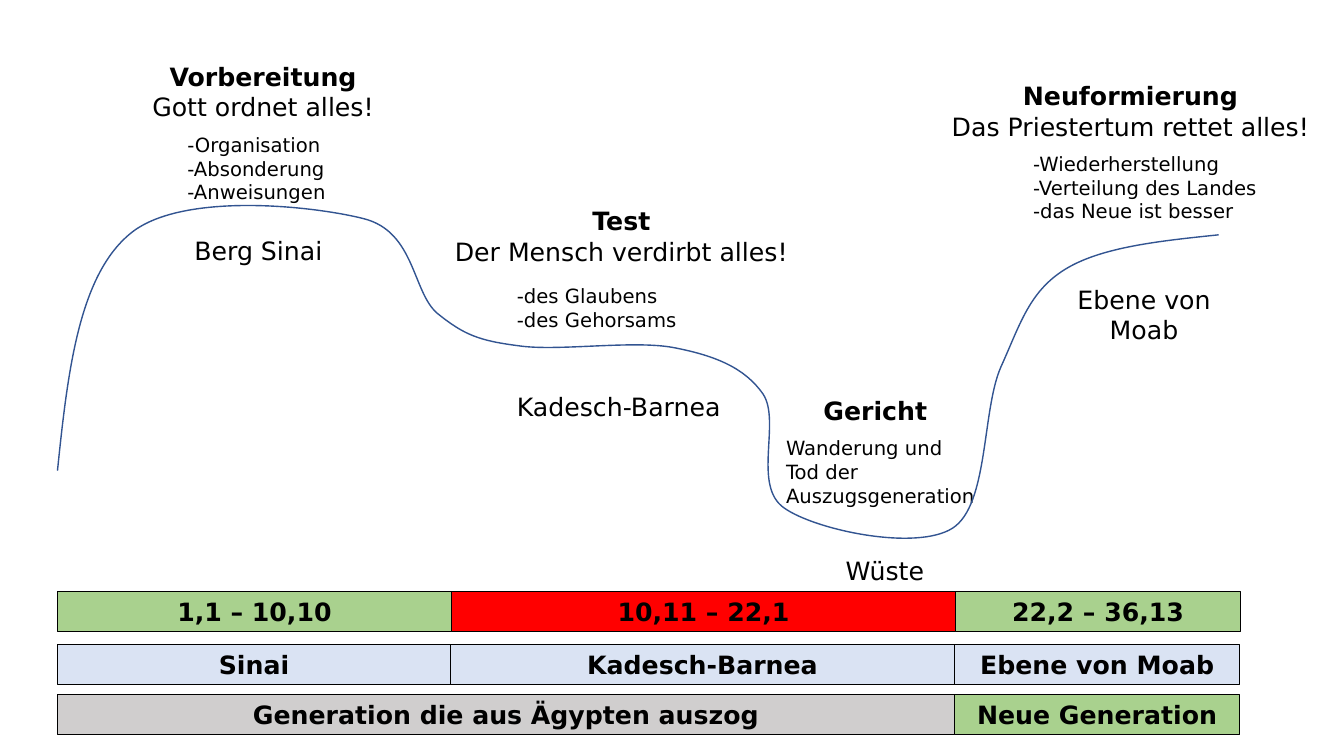
from lxml.etree import SubElement
from pptx import Presentation
from pptx.dml.color import RGBColor
from pptx.enum.shapes import MSO_SHAPE
from pptx.enum.text import MSO_ANCHOR, MSO_AUTO_SIZE, PP_ALIGN
from pptx.oxml.ns import qn
from pptx.util import Inches, Pt

COLORS = {
    "black": "000000",
    "curve": "325491",
    "blue": "DAE3F3",
    "gray": "D0CECE",
    "green": "A9D18E",
    "red": "FF0000",
}
FRAME = {
    "word_wrap": True,
    "auto_size": MSO_AUTO_SIZE.SHAPE_TO_FIT_TEXT,
    "vertical_anchor": MSO_ANCHOR.TOP,
}
HEAD = {"name": "DejaVu Sans", "size": Pt(18), "bold": True}
LABEL = {**HEAD, "bold": False}
NOTE = {**LABEL, "size": Pt(14)}
LEFT, CENTER = PP_ALIGN.LEFT, PP_ALIGN.CENTER


def color(name):
    return RGBColor.from_string(COLORS[name])


def write(shape, lines, align):
    frame = shape.text_frame
    for key, value in FRAME.items():
        setattr(frame, key, value)
    for i, (text, style) in enumerate(lines):
        para = frame.add_paragraph() if i else frame.paragraphs[0]
        para.alignment = align
        run = para.add_run()
        run.text = text
        for key, value in style.items():
            setattr(run.font, key, value)
        run.font.color.rgb = color("black")


deck = Presentation()
deck.slide_width, deck.slide_height = Inches(40 / 3), Inches(7.5)
slide = deck.slides.add_slide(deck.slide_layouts[6])
shapes = slide.shapes

texts = [
    (1.22, 0.56, 2.78, 0.71, CENTER,
     [("Vorbereitung", HEAD), ("Gott ordnet alles!", LABEL)]),
    (1.76, 1.27, 2.04, 0.81, LEFT,
     [("-Organisation", NOTE), ("-Absonderung", NOTE), ("-Anweisungen", NOTE)]),
    (1.83, 2.29, 1.56, 0.4, LEFT, [("Berg Sinai", LABEL)]),
    (5.03, 3.83, 2.34, 0.4, LEFT, [("Kadesch-Barnea", LABEL)]),
    (8.29, 5.46, 1.08, 0.4, LEFT, [("Wüste", LABEL)]),
    (4.18, 1.99, 3.97, 0.71, CENTER,
     [("Test", HEAD), ("Der Mensch verdirbt alles!", LABEL)]),
    (8.07, 3.87, 1.25, 0.4, LEFT, [("Gericht", HEAD)]),
    (5.03, 2.77, 2.04, 0.57, LEFT,
     [("-des Glaubens", NOTE), ("-des Gehorsams", NOTE)]),
    (7.7, 4.28, 2.09, 0.81, LEFT,
     [("Wanderung und Tod der Auszugsgeneration", NOTE)]),
    (10.53, 2.77, 1.64, 0.71, CENTER, [("Ebene von Moab", LABEL)]),
    (9.32, 0.75, 3.79, 0.71, CENTER,
     [("Neuformierung", HEAD), ("Das Priestertum rettet alles!", LABEL)]),
    (10.15, 1.46, 2.61, 0.81, LEFT,
     [("-Wiederherstellung", NOTE), ("-Verteilung des Landes", NOTE),
      ("-das Neue ist besser", NOTE)]),
]
for *place, align, lines in texts:
    write(shapes.add_textbox(*map(Inches, place)), lines, align)

start = (0.57, 4.67)
bends = [
    ((0.67, 3.7), (0.78, 2.74), (1.29, 2.32)),
    ((1.79, 1.9), (3.1, 2.04), (3.61, 2.17)),
    ((4.12, 2.3), (4.09, 2.9), (4.34, 3.11)),
    ((4.6, 3.32), (4.75, 3.38), (5.14, 3.43)),
    ((5.53, 3.49), (6.28, 3.37), (6.69, 3.45)),
    ((7.1, 3.53), (7.39, 3.65), (7.57, 3.91)),
    ((7.75, 4.18), (7.46, 4.82), (7.78, 5.04)),
    ((8.09, 5.26), (9.09, 5.47), (9.45, 5.24)),
    ((9.81, 5.01), (9.74, 4.07), (9.93, 3.64)),
    ((10.12, 3.22), (10.21, 2.89), (10.57, 2.67)),
    ((10.93, 2.45), (11.51, 2.39), (12.09, 2.33)),
]
form = shapes.build_freeform(*map(Inches, start))
form.add_line_segments(
    [tuple(map(Inches, bend[-1])) for bend in bends], close=False)
curve = form.convert_to_shape()
box = {"left": 0.57, "top": 2.04, "width": 11.52, "height": 3.3}
for key, value in box.items():
    setattr(curve, key, Inches(value))
trace = next(curve.element.iter(qn("a:path")))
trace.set("w", str(curve.width))
trace.set("h", str(curve.height))
for node in list(trace):
    trace.remove(node)
for tag, points in [("a:moveTo", [start])] + [("a:cubicBezTo", b) for b in bends]:
    node = SubElement(trace, qn(tag))
    for x, y in points:
        spot = SubElement(node, qn("a:pt"))
        spot.set("x", str(Inches(x) - curve.left))
        spot.set("y", str(Inches(y) - curve.top))
curve.shadow.inherit = False
curve.fill.background()
curve.line.color.rgb = color("curve")
curve.line.width = Pt(1)

rows = [
    (6.39, [("Sinai", 3.9, "blue"), ("Kadesch-Barnea", 5, "blue"),
            ("Ebene von Moab", 2.83, "blue")]),
    (6.89, [("Generation die aus Ägypten auszog", 8.9, "gray"),
            ("Neue Generation", 2.83, "green")]),
    (5.87, [("1,1 – 10,10", 3.91, "green"), ("10,11 – 22,1", 5, "red"),
            ("22,2 – 36,13", 2.83, "green")]),
]
for top, bars in rows:
    left = 0.57
    for text, width, fill in bars:
        place = map(Inches, (left, top, width, 0.4))
        bar = shapes.add_shape(MSO_SHAPE.RECTANGLE, *place)
        bar.shadow.inherit = False
        bar.fill.solid()
        bar.fill.fore_color.rgb = color(fill)
        bar.line.color.rgb = color("black")
        bar.line.width = Pt(0.75)
        write(bar, [(text, HEAD)], CENTER)
        left += width

deck.save("out.pptx")
